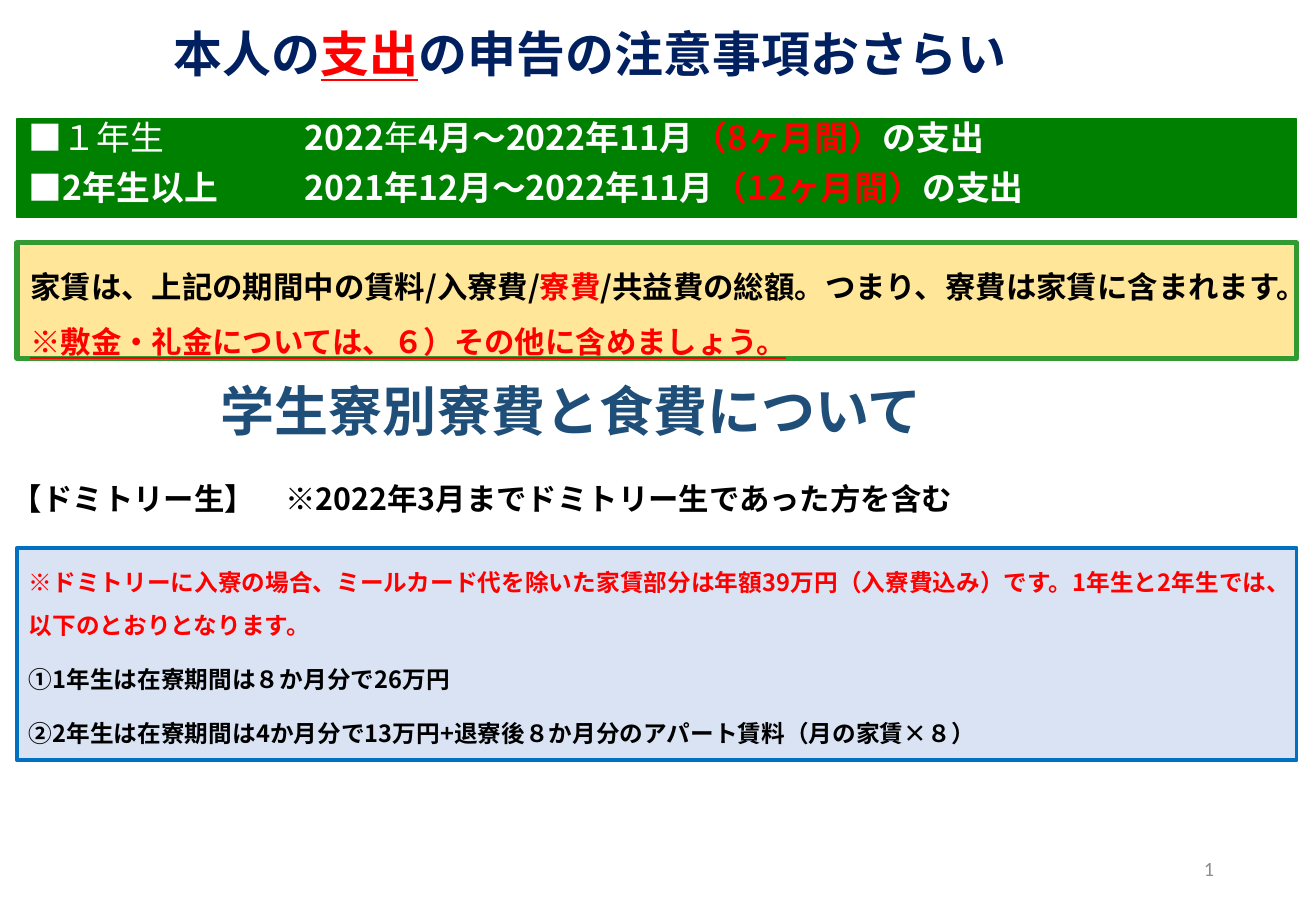
from lxml.etree import SubElement
from pptx import Presentation
from pptx.dml.color import RGBColor
from pptx.enum.shapes import MSO_SHAPE as SHAPE
from pptx.enum.text import MSO_ANCHOR as ANCHOR, PP_ALIGN as ALIGN
from pptx.oxml.ns import qn
from pptx.util import Inches, Pt

WHITE = RGBColor(0xFF, 0xFF, 0xFF)
BLACK = RGBColor(0, 0, 0)
RED = RGBColor(0xFF, 0, 0)
NAVY = RGBColor(0x00, 0x20, 0x60)
STEEL = RGBColor(0x1F, 0x4E, 0x79)
GREEN = RGBColor(0x00, 0x80, 0x00)
LEAF = RGBColor(0x33, 0x99, 0x33)
CREAM = RGBColor(0xFF, 0xE6, 0x99)
BLUE = RGBColor(0x00, 0x70, 0xC0)
PALE = RGBColor(0xDA, 0xE3, 0xF3)
GREY = RGBColor(0x8C, 0x8C, 0x8C)

HOT = {"color": RED}
LINED = {"color": RED, "underline": True}
THIN = {"bold": False}


class Deck:
    """Holds the text style and the current slide."""

    font = "Noto Sans CJK JP"
    left, width = 0.14, 10.53

    def __init__(self, width, height):
        self.prs = Presentation()
        self.prs.slide_width, self.prs.slide_height = Inches(width), Inches(height)
        self.s = self.prs.slides.add_slide(self.prs.slide_layouts[6])

    def run(self, p, text, color, **style):
        r = p.add_run()
        r.text = text
        for name, value in style.items():
            setattr(r.font, name, value)
        r.font.color.rgb = color
        SubElement(r.font._element, qn("a:ea"), typeface=r.font.name)

    def add_text(self, sp, paragraphs, size, color, spacing=0.8, inset=(0.1, 0.05), tab=None):
        tf = sp.text_frame
        x, y = map(Inches, inset)
        frame = {"word_wrap": True, "vertical_anchor": ANCHOR.TOP, "margin_left": x,
                 "margin_right": x, "margin_top": y, "margin_bottom": y}
        for name, value in frame.items():
            setattr(tf, name, value)
        layout = {"alignment": ALIGN.LEFT, "line_spacing": spacing,
                  "space_before": Pt(size * 0.2), "space_after": Pt(size * 0.3)}
        base = {"name": self.font, "size": Pt(size), "bold": True, "color": color}
        for i, runs in enumerate(paragraphs):
            p = tf.add_paragraph() if i else tf.paragraphs[0]
            for name, value in layout.items():
                setattr(p, name, value)
            if tab:
                tabs = SubElement(p._p.get_or_add_pPr(), qn("a:tabLst"))
                SubElement(tabs, qn("a:tab"), pos=str(Inches(tab)), algn="l")
            for text, style in runs:
                self.run(p, text, **{**base, **style})

    def label(self, at, paragraphs, size, color, **options):
        sp = self.s.shapes.add_textbox(*map(Inches, at))
        self.add_text(sp, paragraphs, size, color, **options)
        return sp

    def panel(self, top, height, fill, line, weight, paragraphs, size, color, **options):
        at = map(Inches, (self.left, top, self.width, height))
        sp = self.s.shapes.add_shape(SHAPE.RECTANGLE, *at)
        sp.shadow.inherit = False
        sp.fill.solid()
        sp.fill.fore_color.rgb = fill
        sp.line.color.rgb = line
        sp.line.width = Pt(weight)
        self.add_text(sp, paragraphs, size, color, **options)

    def page_number(self, at, text):
        style = {"name": "Calibri", "bold": False}
        tf = self.label(at, [[(text, style)]], 12, GREY, spacing=1).text_frame
        tf.vertical_anchor = ANCHOR.MIDDLE
        layout = {"alignment": ALIGN.RIGHT, "space_before": Pt(0), "space_after": Pt(0)}
        for name, value in layout.items():
            setattr(tf.paragraphs[0], name, value)


def main():
    deck = Deck(10.83, 7.5)
    deck.page_number((7.65, 6.95, 2.44, 0.4), "1")
    deck.panel(2, 0.95, CREAM, LEAF, 3, [[
        ("家賃は、上記の期間中の賃料/入寮費/", {}),
        ("寮費", HOT),
        ("/共益費の総額。つまり、寮費は家賃に含まれます。", {}),
        ("※敷金・礼金については、６）その他に含めましょう。", LINED),
    ]], 18, BLACK, spacing=1.5, inset=(0.11, 0.06))
    deck.panel(0.98, 0.81, GREEN, GREEN, 0.75, [
        [("■１年生\t", THIN), ("2022", {}), ("年", THIN), ("4月～2022年11月", {}),
         ("（8ヶ月間）", HOT), ("の支出", {})],
        [("■", THIN), ("2年生以上\t2021年12月～2022年11月", {}),
         ("（12ヶ月間）", HOT), ("の支出", {})],
    ], 20, WHITE, tab=2.27)
    deck.label((1.33, 0.24, 7.56, 0.5), [[
        ("本人の", {}), ("支出", LINED), ("の申告の注意事項おさらい", {}),
    ]], 29, NAVY)
    deck.panel(4.51, 1.75, PALE, BLUE, 2.25, [
        [("※ドミトリーに入寮の場合、ミールカード代を除いた家賃部分は年額39万円（入寮費込み）です。"
          "1年生と2年生では、以下のとおりとなります。", HOT)],
        [("①1年生は在寮期間は８か月分で26万円", {})],
        [("②2年生は在寮期間は4か月分で13万円+退寮後８か月分のアパート賃料（月の家賃×８）", {})],
    ], 14, BLACK, spacing=1.5)
    deck.label((0, 3.96, 9.57, 0.34), [[
        ("【ドミトリー生】　※2022年3月までドミトリー生であった方を含む", {}),
    ]], 18, BLACK)
    deck.label((1.72, 3.16, 7.36, 0.53), [[("学生寮別寮費と食費について", {})]], 32, STEEL)
    deck.prs.save("out.pptx")


if __name__ == "__main__":
    main()
